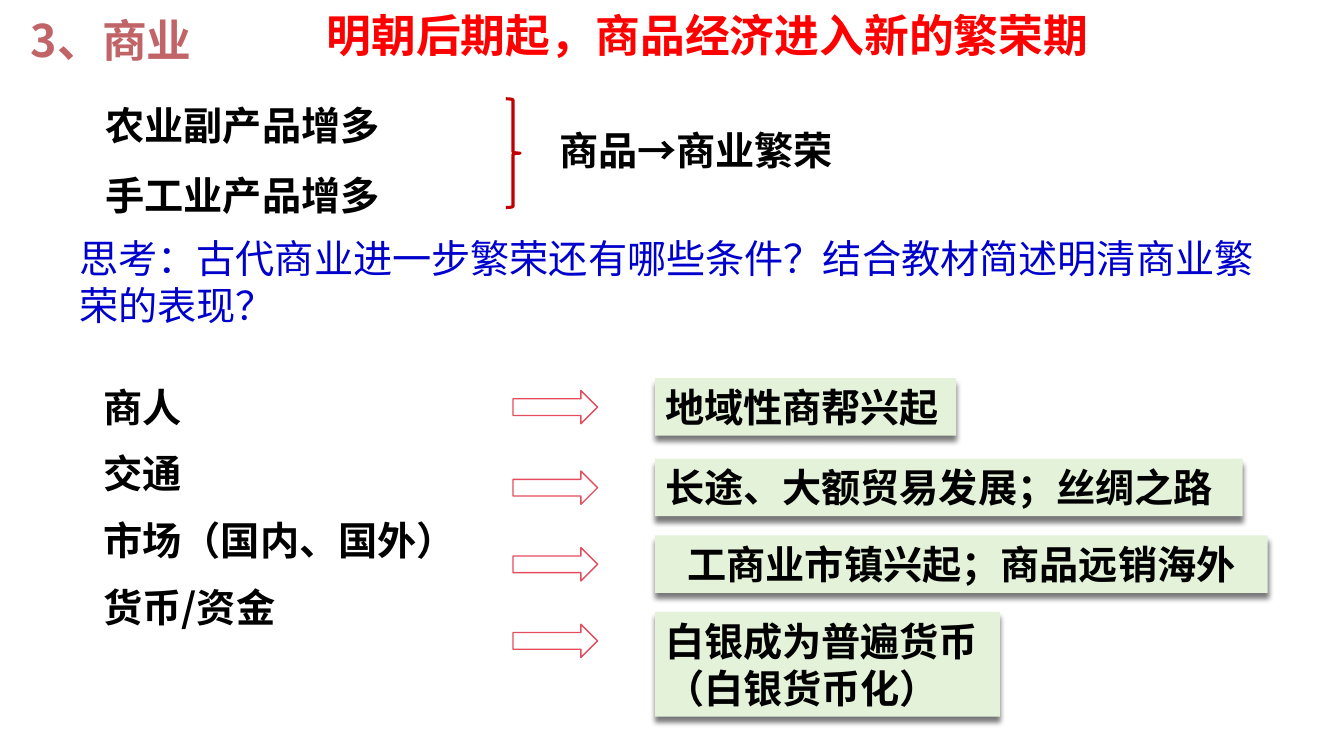
from dataclasses import dataclass

from lxml.etree import SubElement
from pptx import Presentation
from pptx.dml.color import RGBColor
from pptx.enum.shapes import MSO_SHAPE
from pptx.enum.text import MSO_ANCHOR, MSO_AUTO_SIZE, PP_ALIGN
from pptx.oxml.ns import qn
from pptx.util import Cm, Pt


@dataclass(frozen=True)
class Theme:
    """Colours, font and type sizes of the slide."""
    font: str = "Noto Sans CJK SC"
    title_size: int = 32
    body_size: int = 28
    text: str = "000000"
    heading: str = "C16468"
    headline: str = "FF0000"
    question: str = "0000CC"
    brace: str = "C00000"
    arrow: str = "E54C5E"
    arrow_fill: str = "FFFFFF"
    panel: str = "E3F2D9"
    shadow: str = "000000"


class SlideBuilder:
    """Adds styled elements to one slide."""

    def __init__(self, slide, theme):
        self.shapes = slide.shapes
        self.theme = theme

    def set_text(self, shape, lines, size=None, color=None, bold=True, wrap=True,
                 align=PP_ALIGN.LEFT, line_spacing=None, space_before=None):
        """Fill a shape with paragraphs of one style."""
        frame = shape.text_frame
        frame.text = "\n".join(lines)
        frame.word_wrap = wrap
        frame.vertical_anchor = MSO_ANCHOR.TOP
        frame.auto_size = MSO_AUTO_SIZE.SHAPE_TO_FIT_TEXT if wrap else MSO_AUTO_SIZE.NONE
        for paragraph in frame.paragraphs:
            paragraph.alignment = align
            paragraph.line_spacing = line_spacing
            paragraph.space_before = space_before
            font = paragraph.font
            font.size = Pt(size or self.theme.body_size)
            font.bold = bold
            font.color.rgb = RGBColor.from_string(color or self.theme.text)
            font.name = self.theme.font
            defaults = paragraph._p.pPr.find(qn("a:defRPr"))
            SubElement(defaults, qn("a:ea"), typeface=self.theme.font)

    def text(self, left, top, width, height, *lines, **style):
        """Add a text box."""
        box = self.shapes.add_textbox(Cm(left), Cm(top), Cm(width), Cm(height))
        self.set_text(box, lines, **style)

    def shape(self, kind, left, top, width, height, fill=None, line=None, weight=1):
        """Add a preset shape without a shadow."""
        shape = self.shapes.add_shape(kind, Cm(left), Cm(top), Cm(width), Cm(height))
        shape.shadow.inherit = False
        if fill:
            shape.fill.solid()
            shape.fill.fore_color.rgb = RGBColor.from_string(fill)
        else:
            shape.fill.background()
        if line:
            shape.line.color.rgb = RGBColor.from_string(line)
            shape.line.width = Pt(weight)
        else:
            shape.line.fill.background()
        return shape

    def brace(self, left, top, width, height):
        """Add a closing brace."""
        self.shape(MSO_SHAPE.RIGHT_BRACE, left, top, width, height,
                   line=self.theme.brace, weight=2.25)

    def arrow(self, left, top, width, height):
        """Add an outlined block arrow."""
        self.shape(MSO_SHAPE.RIGHT_ARROW, left, top, width, height,
                   fill=self.theme.arrow_fill, line=self.theme.arrow)

    def panel(self, left, top, width, height, text, align):
        """Add a tinted text panel with a soft shadow below."""
        panel = self.shape(MSO_SHAPE.RECTANGLE, left, top, width, height,
                           fill=self.theme.panel)
        effects = panel._element.spPr.find(qn("a:effectLst"))
        shadow = SubElement(effects, qn("a:outerShdw"), blurRad=str(Pt(4)),
                            dist=str(Pt(4)), dir="5400000", algn="t", rotWithShape="0")
        color = SubElement(shadow, qn("a:srgbClr"), val=self.theme.shadow)
        SubElement(color, qn("a:alpha"), val="52000")
        self.set_text(panel, [text], align=align)


def main():
    """Build and save the slide."""
    presentation = Presentation()
    presentation.slide_width = Cm(33.87)
    presentation.slide_height = Cm(19.05)
    theme = Theme()
    builder = SlideBuilder(
        presentation.slides.add_slide(presentation.slide_layouts[6]), theme)

    builder.text(0.53, 0.2, 9.2, 1.63, "3、商业",
                 size=theme.title_size, color=theme.heading)
    builder.text(7.98, 0.56, 19.71, 1.35, "明朝后期起，商品经济进入新的繁荣期",
                 size=theme.title_size, color=theme.headline, wrap=False, line_spacing=0.6)

    builder.text(2.41, 1.83, 9.83, 3.84, "农业副产品增多", "手工业产品增多", line_spacing=1.5)
    builder.brace(12.75, 2.49, 0.36, 2.74)
    builder.text(13.84, 3.05, 10.6, 1.45, "商品→商业繁荣")

    builder.text(1.75, 5.77, 30.35, 2.64,
                 "思考：古代商业进一步繁荣还有哪些条件？结合教材简述明清商业繁荣的表现？",
                 color=theme.question, bold=False)

    builder.text(2.36, 9.53, 10.85, 6.83, "商人", "交通", "市场（国内、国外）", "货币/资金",
                 space_before=Pt(14))
    results = [
        (9.53, 7.59, 1.45, "地域性商帮兴起", PP_ALIGN.LEFT),
        (11.56, 14.81, 1.45, "长途、大额贸易发展；丝绸之路", PP_ALIGN.LEFT),
        (13.49, 15.44, 1.45, "工商业市镇兴起；商品远销海外", PP_ALIGN.CENTER),
        (15.42, 8.69, 2.64, "白银成为普遍货币（白银货币化）", PP_ALIGN.LEFT),
    ]
    for top, width, height, text, align in results:
        builder.arrow(12.93, top + 0.31, 2.13, 0.84)
        builder.panel(16.51, top, width, height, text, align)

    presentation.save("out.pptx")


if __name__ == "__main__":
    main()
